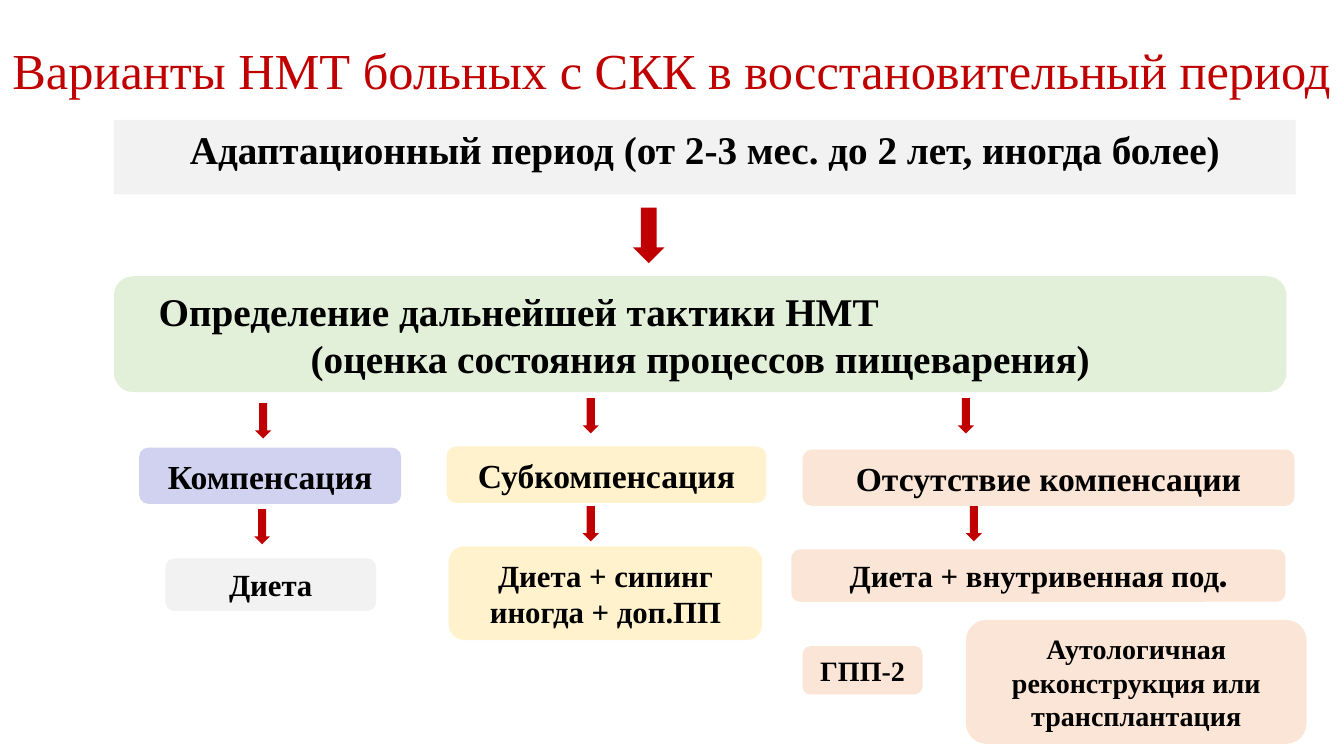
from pptx import Presentation
from pptx.dml.color import RGBColor
from pptx.enum.shapes import MSO_SHAPE
from pptx.enum.text import MSO_ANCHOR, PP_ALIGN
from pptx.util import Inches, Pt

FONT = "Times New Roman"
RED, BLACK, GREY, GREEN = "C00000", "000000", "F2F2F2", "E2F0D9"
LILAC, YELLOW, PEACH = "D1D1F0", "FFF2CC", "FBE5D6"
ARROW_W, ARROW_H = 0.16, 0.35


def rgb(value):
    return RGBColor.from_string(value)


def add_block(s, kind, x, y, w, h, fill):
    sp = s.shapes.add_shape(kind, Inches(x), Inches(y), Inches(w), Inches(h))
    sp.shadow.inherit = False
    sp.fill.solid()
    sp.fill.fore_color.rgb = rgb(fill)
    sp.line.fill.background()
    return sp


def write(sp, lines, size, color=BLACK, bold=True, anchor=MSO_ANCHOR.MIDDLE):
    """Fill a shape with centred paragraphs and return them."""
    tf = sp.text_frame
    tf.word_wrap = True
    tf.vertical_anchor = anchor
    for i, line in enumerate(lines):
        p = tf.add_paragraph() if i else tf.paragraphs[0]
        p.alignment = PP_ALIGN.CENTER
        p.font.name = FONT
        p.font.size = Pt(size)
        p.font.bold = bold
        p.font.color.rgb = rgb(color)
        p.add_run().text = line
    return tf.paragraphs


def add_card(s, x, y, w, h, fill, lines, size):
    sp = add_block(s, MSO_SHAPE.ROUNDED_RECTANGLE, x, y, w, h, fill)
    return write(sp, lines, size)


def add_arrow(s, x, y, w=ARROW_W, h=ARROW_H):
    add_block(s, MSO_SHAPE.DOWN_ARROW, x, y, w, h, RED)


def add_title(s, x, y, w, h):
    box = s.shapes.add_textbox(Inches(x), Inches(y), Inches(w), Inches(h))
    p = write(box, ["Варианты НМТ больных с СКК в восстановительный период"],
              36, RED, False, MSO_ANCHOR.TOP)[0]
    p.line_spacing = 0.9
    box.text_frame.margin_left = box.text_frame.margin_right = 0


def add_period(s, x, y, w, h):
    """Adaptation period bar with the large arrow below it."""
    bar = add_block(s, MSO_SHAPE.RECTANGLE, x, y, w, h, GREY)
    p = write(bar, ["Адаптационный период (от 2-3 мес. до 2 лет, иногда более)"],
              28, anchor=MSO_ANCHOR.TOP)[0]
    p.space_before = Pt(12)
    add_arrow(s, x + 5.15, y + 0.87, 0.31, 0.55)


def add_tactics(s, x, y, w, h):
    first = add_card(s, x, y, w, h, GREEN,
                     ["Определение дальнейшей тактики НМТ",
                      "(оценка состояния процессов пищеварения)"], 28)[0]
    first.alignment = PP_ALIGN.LEFT
    first._p.get_or_add_pPr().set("marL", str(Inches(0.29)))


def add_branch(s, x, y, w, h, fill, state, arrows, therapy):
    """Compensation state, its two arrows (dx, dy) and the therapy card."""
    add_card(s, x, y, w, h, fill, [state], 24)
    for dx, dy in arrows:
        add_arrow(s, x + dx, y + dy)
    dx, dy, tw, th, therapy_fill, lines = therapy
    return add_card(s, x + dx, y + dy, tw, th, therapy_fill, lines, 22)


def add_last_options(s, x, y):
    add_card(s, x, y + 0.26, 1.19, 0.48, PEACH, ["ГПП-2"], 20)
    add_card(s, x + 1.62, y, 3.38, 1.23, PEACH,
             ["Аутологичная реконструкция или трансплантация"], 20)


def main():
    prs = Presentation()
    prs.slide_width, prs.slide_height = Inches(13.33), Inches(7.5)
    s = prs.slides.add_slide(prs.slide_layouts[6])

    add_period(s, 1.13, 1.19, 11.72, 0.74)
    add_title(s, 0, 0.41, 13.33, 0.94)
    add_tactics(s, 1.13, 2.74, 11.63, 1.15)
    add_branch(s, 1.38, 4.44, 2.6, 0.56, LILAC, "Компенсация",
               [(1.15, -0.44), (1.14, 0.61)],
               (0.26, 1.1, 2.09, 0.52, GREY, ["Диета"]))
    add_branch(s, 4.43, 4.43, 3.17, 0.56, YELLOW, "Субкомпенсация",
               [(1.35, -0.48), (1.35, 0.59)],
               (0.02, 0.99, 3.11, 0.93, YELLOW,
                ["Диета + сипинг", "иногда + доп.ПП"]))
    infusion = add_branch(s, 7.96, 4.46, 4.88, 0.56, PEACH,
                          "Отсутствие компенсации",
                          [(1.54, -0.51), (1.62, 0.56)],
                          (-0.11, 0.99, 4.9, 0.52, PEACH,
                           ["Диета + внутривенная под"]))[0]
    dot = infusion.add_run()
    dot.text = "."
    dot.font.name = "Montserrat"
    add_last_options(s, 7.96, 6.15)

    prs.save("out.pptx")


if __name__ == "__main__":
    main()
